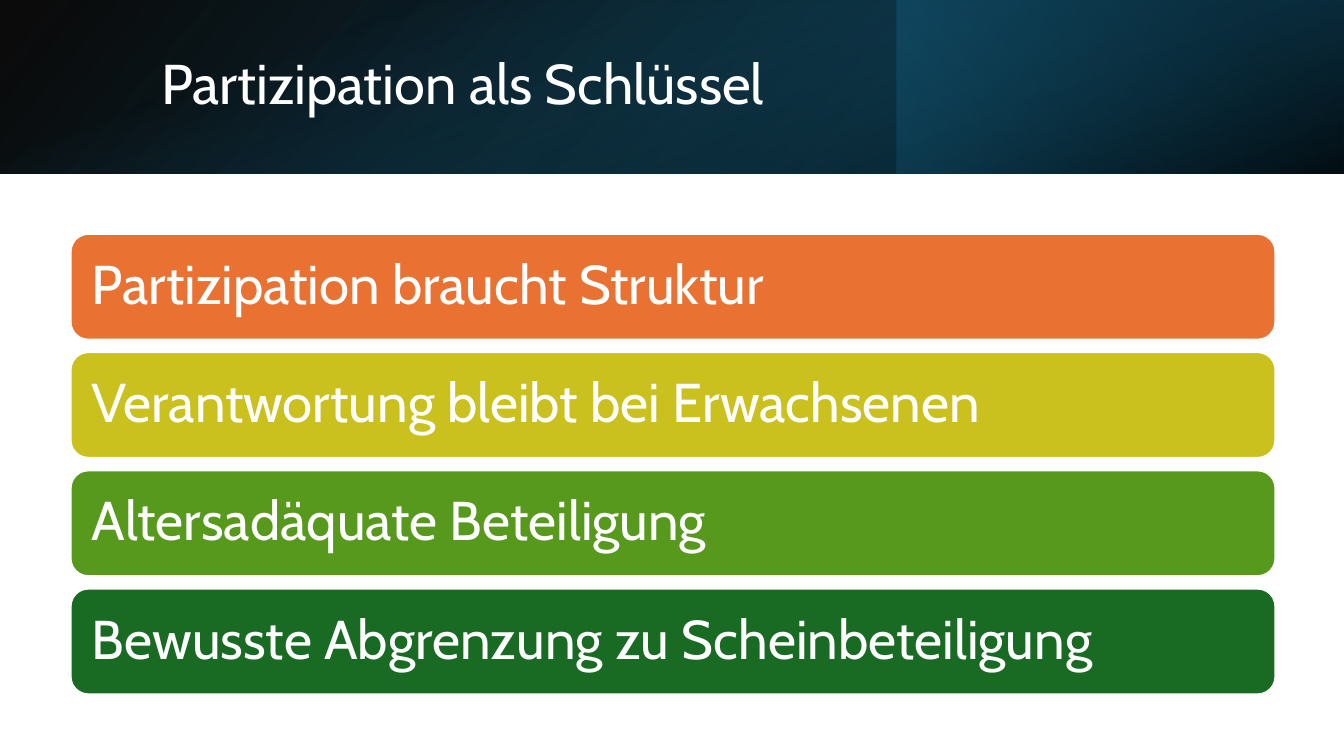
import pptx
import pptx.util
import pptx.dml.color
import pptx.enum.shapes
import pptx.enum.text
import pptx.oxml
import pptx.oxml.ns
from pptx.util import Inches

FONT = "Cabin"
COLORS = {
    "white": "FFFFFF", "black": "000000", "teal": "156082",
    "navy": "104862", "deep": "0B3041", "orange": "E97132",
    "yellow": "CBC11E", "lime": "56991D", "green": "196B24",
}
BARS = [
    ("Partizipation braucht Struktur", "orange"),
    ("Verantwortung bleibt bei Erwachsenen", "yellow"),
    ("Altersadäquate Beteiligung", "lime"),
    ("Bewusste Abgrenzung zu Scheinbeteiligung", "green"),
]
BAR_TOP, BAR_STEP = 2.32, 1.173


def rgb(name):
    return pptx.dml.color.RGBColor.from_string(COLORS[name])


def add_text(tf, text, size):
    tf.word_wrap = True
    tf.vertical_anchor = pptx.enum.text.MSO_ANCHOR.MIDDLE
    p = tf.paragraphs[0]
    p.alignment = pptx.enum.text.PP_ALIGN.LEFT
    p.line_spacing = 0.9
    r = p.add_run()
    r.text = text
    r.font.size = pptx.util.Pt(size)
    r.font.name = FONT
    r.font.color.rgb = rgb("white")


def add_band(s, box, stops, angle, rotation=0, flip=False):
    """Add a header layer; stops are (position %, colour, opacity %)."""
    sp = s.shapes.add_shape(pptx.enum.shapes.MSO_SHAPE.RECTANGLE,
                            *(Inches(v) for v in box))
    sp.shadow.inherit = False
    sp.line.fill.background()
    sp.rotation = rotation
    if flip:
        sp._element.spPr.find(pptx.oxml.ns.qn("a:xfrm")).set("flipH", "1")
    gradient_stops = "".join(
        f'<a:gs pos="{pos * 1000}"><a:srgbClr val="{COLORS[color]}">'
        f'<a:alpha val="{alpha * 1000}"/></a:srgbClr></a:gs>'
        for pos, color, alpha in stops)
    gradient = pptx.oxml.parse_xml(
        f'<a:gradFill {pptx.oxml.ns.nsdecls("a")} rotWithShape="1">'
        f'<a:gsLst>{gradient_stops}</a:gsLst>'
        f'<a:lin ang="{angle * 60000}" scaled="0"/></a:gradFill>')
    sp.fill.background()
    no_fill = sp._element.spPr.find(pptx.oxml.ns.qn("a:noFill"))
    no_fill.getparent().replace(no_fill, gradient)


def add_title(s, text):
    title = s.shapes.title
    title.left, title.top = Inches(1.5), Inches(0.38)
    title.width, title.height = Inches(10.98), Inches(0.96)
    add_text(title.text_frame, text, 40)
    # Bring the title in front of the header layers
    s.shapes._spTree.append(title._element)


def add_bar(s, top, text, color):
    sp = s.shapes.add_shape(pptx.enum.shapes.MSO_SHAPE.ROUNDED_RECTANGLE,
                            Inches(0.7), Inches(top), Inches(11.95), Inches(1.05))
    sp.shadow.inherit = False
    sp.fill.solid()
    sp.fill.fore_color.rgb = rgb(color)
    sp.line.color.rgb = rgb("white")
    sp.line.width = pptx.util.Pt(1.5)
    tf = sp.text_frame
    tf.margin_left = tf.margin_right = Inches(0.16)
    tf.margin_top = tf.margin_bottom = Inches(0.16)
    add_text(tf, text, 39)


def main():
    prs = pptx.Presentation()
    prs.slide_width, prs.slide_height = Inches(13.33), Inches(7.5)
    s = prs.slides.add_slide(prs.slide_layouts[5])

    # Header
    add_band(s, (0, 0, 13.33, 1.72),
             [(0, "black", 96), (100, "navy", 100)], 140, flip=True)
    add_band(s, (8.89, 0, 4.44, 1.72),
             [(19, "deep", 68), (100, "teal", 79)], 320, rotation=180)
    add_band(s, (5.8, -5.8, 1.72, 13.33),
             [(23, "teal", 0), (99, "black", 74)], 340, rotation=90)
    add_title(s, "Partizipation als Schlüssel")

    # Key messages
    for i, (text, color) in enumerate(BARS):
        add_bar(s, BAR_TOP + i * BAR_STEP, text, color)

    prs.save("out.pptx")


if __name__ == "__main__":
    main()
